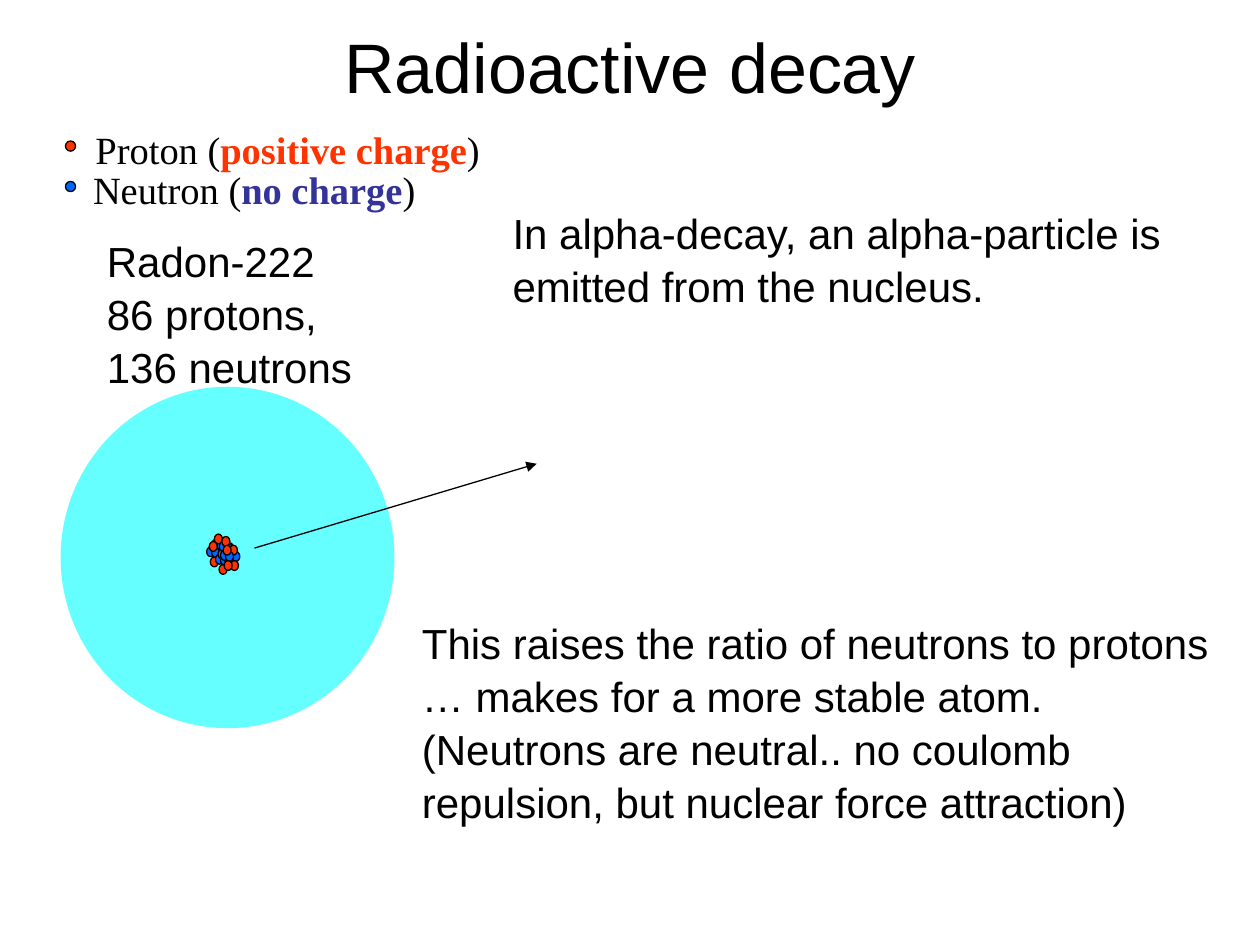
import dataclasses
import typing

import lxml.etree
import pptx
import pptx.dml.color
import pptx.enum.shapes
import pptx.enum.text
import pptx.oxml.ns
import pptx.util

Pt = pptx.util.Pt


@dataclasses.dataclass(frozen=True)
class Theme:
    ink: str = "000000"
    proton: str = "FF3300"
    neutron: str = "0066FF"
    no_charge: str = "333399"
    atom: str = "66FFFF"
    sans: str = "Arial"
    serif: str = "Times New Roman"
    title_size: float = 40
    body_size: float = 24
    legend_size: float = 22
    line_width: float = 0.75
    line_spacing: float = 1.05


THEME = Theme()


class Box(typing.NamedTuple):
    left: float
    top: float
    width: float
    height: float


class Span(typing.NamedTuple):
    text: str
    color: str = THEME.ink
    bold: bool = False


class Nucleon(typing.NamedTuple):
    dx: float
    dy: float
    color: str


@dataclasses.dataclass(frozen=True)
class Passage:
    box: Box
    paragraphs: list[list[Span]]
    font: str = THEME.sans
    size: float = THEME.body_size
    wrap: bool = True
    centered: bool = False


@dataclasses.dataclass(frozen=True)
class LegendEntry:
    dot_top: float
    label_box: Box
    particle: str
    charge: str
    dot_color: str
    charge_color: str


ALPHA_PARTICLE = [
    Nucleon(0, 0, THEME.neutron),
    Nucleon(2.9, 0.6, THEME.neutron),
    Nucleon(1.5, -3, THEME.proton),
    Nucleon(2.1, 5.8, THEME.proton),
]
CLUSTERS_BEHIND = [(121, 308.2), (118.1, 312.5), (127.4, 313.2), (123.1, 316.8),
                   (125.3, 309.6), (129.6, 314.6), (126, 314.6)]
LEGEND = [
    LegendEntry(80.6, Box(47.5, 67, 234.7, 33.8), "Proton", "positive charge",
                THEME.proton, THEME.proton),
    LegendEntry(103.7, Box(46.1, 90, 198.7, 33.8), "Neutron", "no charge",
                THEME.neutron, THEME.no_charge),
]
PASSAGES = [
    Passage(Box(36, 21.6, 648, 31.7), [[Span("Radioactive decay")]],
            size=THEME.title_size, centered=True),
    Passage(Box(54, 129.6, 161.3, 93.6),
            [[Span("Radon-222")], [Span("86 protons,")], [Span("136 neutrons")]],
            wrap=False),
    Passage(Box(285.8, 113.8, 399.6, 64.8),
            [[Span("In alpha-decay, an alpha-particle is emitted from the nucleus.")]]),
    Passage(Box(234, 347.8, 468.7, 123.8),
            [[Span("This raises the ratio of neutrons to protons … makes for a more stable atom.")],
             [Span("(Neutrons are neutral.. no coulomb repulsion, but nuclear force attraction)")]]),
]


def rgb(color: str) -> pptx.dml.color.RGBColor:
    return pptx.dml.color.RGBColor.from_string(color)


def draw_ellipse(shapes, box: Box, color: str, outlined: bool = True) -> None:
    ellipse = shapes.add_shape(pptx.enum.shapes.MSO_SHAPE.OVAL, *map(Pt, box))
    ellipse.shadow.inherit = False
    ellipse.fill.solid()
    ellipse.fill.fore_color.rgb = rgb(color)
    if outlined:
        ellipse.line.color.rgb = rgb(THEME.ink)
        ellipse.line.width = Pt(THEME.line_width)
    else:
        ellipse.line.fill.background()


def draw_cluster(slide, left: float, top: float) -> None:
    cluster = slide.shapes.add_group_shape()
    for nucleon in ALPHA_PARTICLE:
        box = Box(left + nucleon.dx, top + nucleon.dy, 4.6, 5.6)
        draw_ellipse(cluster.shapes, box, nucleon.color)


def write_passage(slide, passage: Passage) -> None:
    frame = slide.shapes.add_textbox(*map(Pt, passage.box)).text_frame
    frame.word_wrap = passage.wrap
    if passage.centered:
        frame.vertical_anchor = pptx.enum.text.MSO_ANCHOR.MIDDLE
    else:
        frame.auto_size = pptx.enum.text.MSO_AUTO_SIZE.SHAPE_TO_FIT_TEXT
    for index, spans in enumerate(passage.paragraphs):
        paragraph = frame.add_paragraph() if index else frame.paragraphs[0]
        if passage.centered:
            paragraph.alignment = pptx.enum.text.PP_ALIGN.CENTER
        else:
            paragraph.line_spacing = THEME.line_spacing
        for span in spans:
            run = paragraph.add_run()
            run.text = span.text
            run.font.name = passage.font
            run.font.size = Pt(passage.size)
            run.font.bold = span.bold
            run.font.color.rgb = rgb(span.color)


def draw_legend_entry(slide, entry: LegendEntry) -> None:
    draw_ellipse(slide.shapes, Box(37.4, entry.dot_top, 5.8, 5.8), entry.dot_color)
    spans = [Span(f"{entry.particle} ("), Span(entry.charge, entry.charge_color, True), Span(")")]
    write_passage(slide, Passage(entry.label_box, [spans], THEME.serif,
                                 THEME.legend_size, wrap=False))


def draw_emission(slide, start: tuple[float, float], end: tuple[float, float]) -> None:
    emission = slide.shapes.add_connector(
        pptx.enum.shapes.MSO_CONNECTOR.STRAIGHT, *map(Pt, (*start, *end)))
    emission.line.color.rgb = rgb(THEME.ink)
    emission.line.width = Pt(THEME.line_width)
    qn = pptx.oxml.ns.qn
    properties = emission._element.spPr
    lxml.etree.SubElement(properties.find(qn("a:ln")), qn("a:tailEnd"), type="triangle")
    lxml.etree.SubElement(properties, qn("a:effectLst"))


def main() -> None:
    deck = pptx.Presentation()
    deck.slide_width, deck.slide_height = Pt(720), Pt(540)
    slide = deck.slides.add_slide(deck.slide_layouts[6])
    draw_ellipse(slide.shapes, Box(34.6, 221, 190.8, 195.1), THEME.atom, outlined=False)
    for left, top in CLUSTERS_BEHIND:
        draw_cluster(slide, left, top)
    for entry in LEGEND:
        draw_legend_entry(slide, entry)
    draw_emission(slide, (145.4, 313.2), (306.7, 265))
    for passage in PASSAGES:
        write_passage(slide, passage)
    deck.save("out.pptx")


if __name__ == "__main__":
    main()
